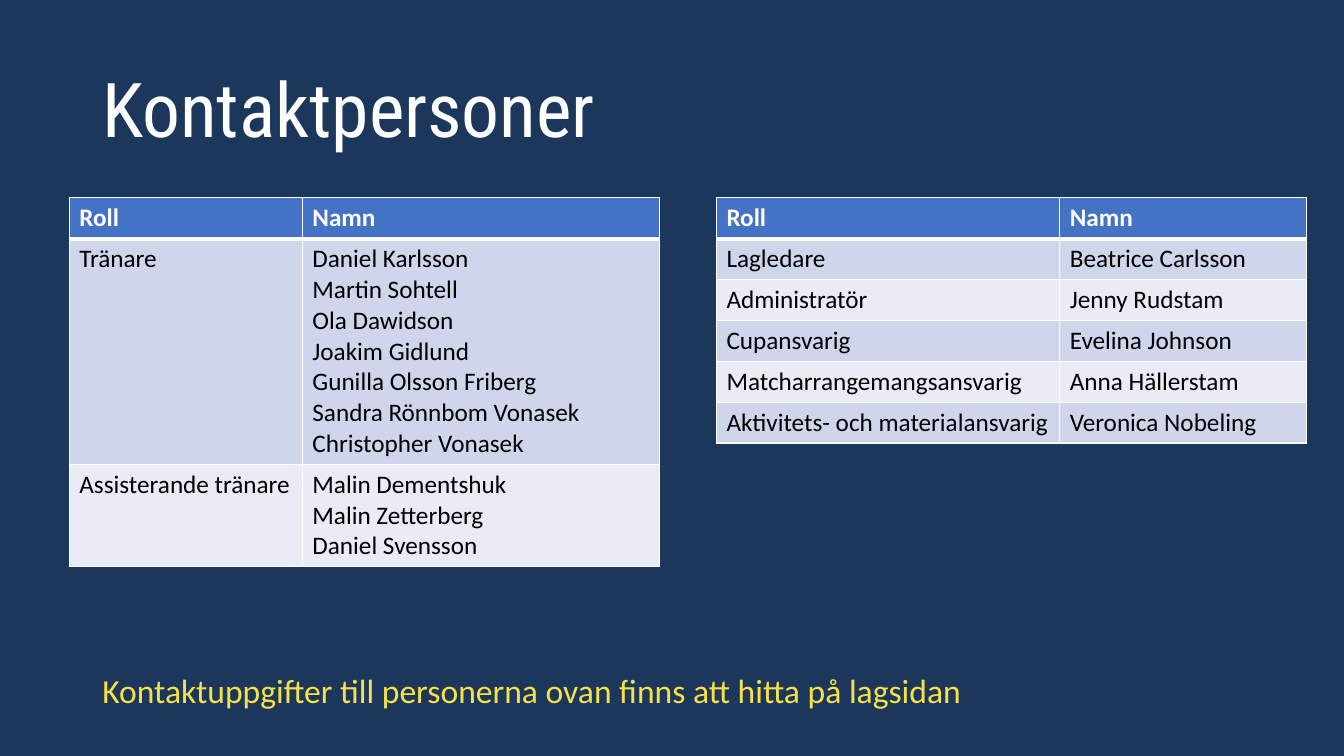
from lxml.etree import SubElement
from pptx import Presentation
from pptx.dml.color import RGBColor
from pptx.enum.text import MSO_ANCHOR as Anchor
from pptx.oxml.ns import qn
from pptx.util import Pt

NAVY, BLUE, WHITE, BLACK, YELLOW = "1B375C", "4472C4", "FFFFFF", "000000", "F8E047"
BANDS = ("CFD5EA", "E9EBF5")
BODY_FONT, TITLE_FONT = "Calibri", "Roboto Condensed"
LINE_HEIGHT, CELL_PADDING = 22, 7.2
TABLE_TOP = 141.3

HEADER = ("Roll", "Namn")
COACHES = [
    HEADER,
    ("Tränare", "Daniel Karlsson\nMartin Sohtell\nOla Dawidson\nJoakim Gidlund\n"
     "Gunilla Olsson Friberg\nSandra Rönnbom Vonasek\nChristopher Vonasek"),
    ("Assisterande tränare", "Malin Dementshuk\nMalin Zetterberg\nDaniel Svensson"),
]
ORGANISERS = [
    HEADER,
    ("Lagledare", "Beatrice Carlsson"),
    ("Administratör", "Jenny Rudstam"),
    ("Cupansvarig", "Evelina Johnson"),
    ("Matcharrangemangsansvarig", "Anna Hällerstam"),
    ("Aktivitets- och materialansvarig", "Veronica Nobeling"),
]


def color(value):
    return RGBColor.from_string(value)


def set_text(text_frame, text, size, font_name, text_color, bold=False):
    text_frame.text = text
    for paragraph in text_frame.paragraphs:
        for run in paragraph.runs:
            run.font.size = Pt(size)
            run.font.name = font_name
            run.font.bold = bold
            run.font.color.rgb = color(text_color)


def add_text(slide, box, text, size, font_name, text_color, anchor=Anchor.TOP):
    text_frame = slide.shapes.add_textbox(*map(Pt, box)).text_frame
    text_frame.word_wrap = True
    text_frame.vertical_anchor = anchor
    set_text(text_frame, text, size, font_name, text_color)
    return text_frame


def set_borders(cell, top, bottom):
    properties = cell._tc.get_or_add_tcPr()
    for side, width in (("L", 1), ("R", 1), ("T", top), ("B", bottom)):
        line = SubElement(properties, qn(f"a:ln{side}"), w=str(Pt(width)))
        fill = SubElement(line, qn("a:solidFill"))
        SubElement(fill, qn("a:srgbClr"), val=WHITE)


def add_contact_table(slide, left, column_widths, rows):
    # Each row is as tall as its longest list of names
    heights = [LINE_HEIGHT * (names.count("\n") + 1) + CELL_PADDING for _, names in rows]
    frame = slide.shapes.add_table(
        len(rows), len(column_widths), Pt(left), Pt(TABLE_TOP),
        Pt(sum(column_widths)), Pt(sum(heights)))
    table = frame.table
    for column, width in zip(table.columns, column_widths):
        column.width = Pt(width)
    for index, (row, height, texts) in enumerate(zip(table.rows, heights, rows)):
        row.height = Pt(height)
        is_header = index == 0
        for cell, text in zip(row.cells, texts):
            # A thick rule divides the header from the body
            set_borders(cell, top=3 if index == 1 else 1, bottom=3 if is_header else 1)
            cell.fill.solid()
            cell.fill.fore_color.rgb = color(BLUE if is_header else BANDS[(index - 1) % 2])
            set_text(cell.text_frame, text, 18, BODY_FONT,
                     WHITE if is_header else BLACK, bold=is_header)


def main():
    presentation = Presentation()
    presentation.slide_width, presentation.slide_height = Pt(960), Pt(540)
    slide = presentation.slides.add_slide(presentation.slide_layouts[6])
    slide.background.fill.solid()
    slide.background.fill.fore_color.rgb = color(NAVY)

    # Title
    title = add_text(slide, (66, 28.75, 828, 104.4), "Kontaktpersoner",
                     54, TITLE_FONT, WHITE, Anchor.MIDDLE)
    title.paragraphs[0].line_spacing = 0.9

    # Contact tables
    add_contact_table(slide, 49.5, (166.5, 255), COACHES)
    add_contact_table(slide, 511.75, (245.25, 176.25), ORGANISERS)

    # Closing note
    add_text(slide, (66, 475.2, 672, 36),
             "Kontaktuppgifter till personerna ovan finns att hitta på lagsidan",
             24, BODY_FONT, YELLOW)

    presentation.save("out.pptx")


if __name__ == "__main__":
    main()
